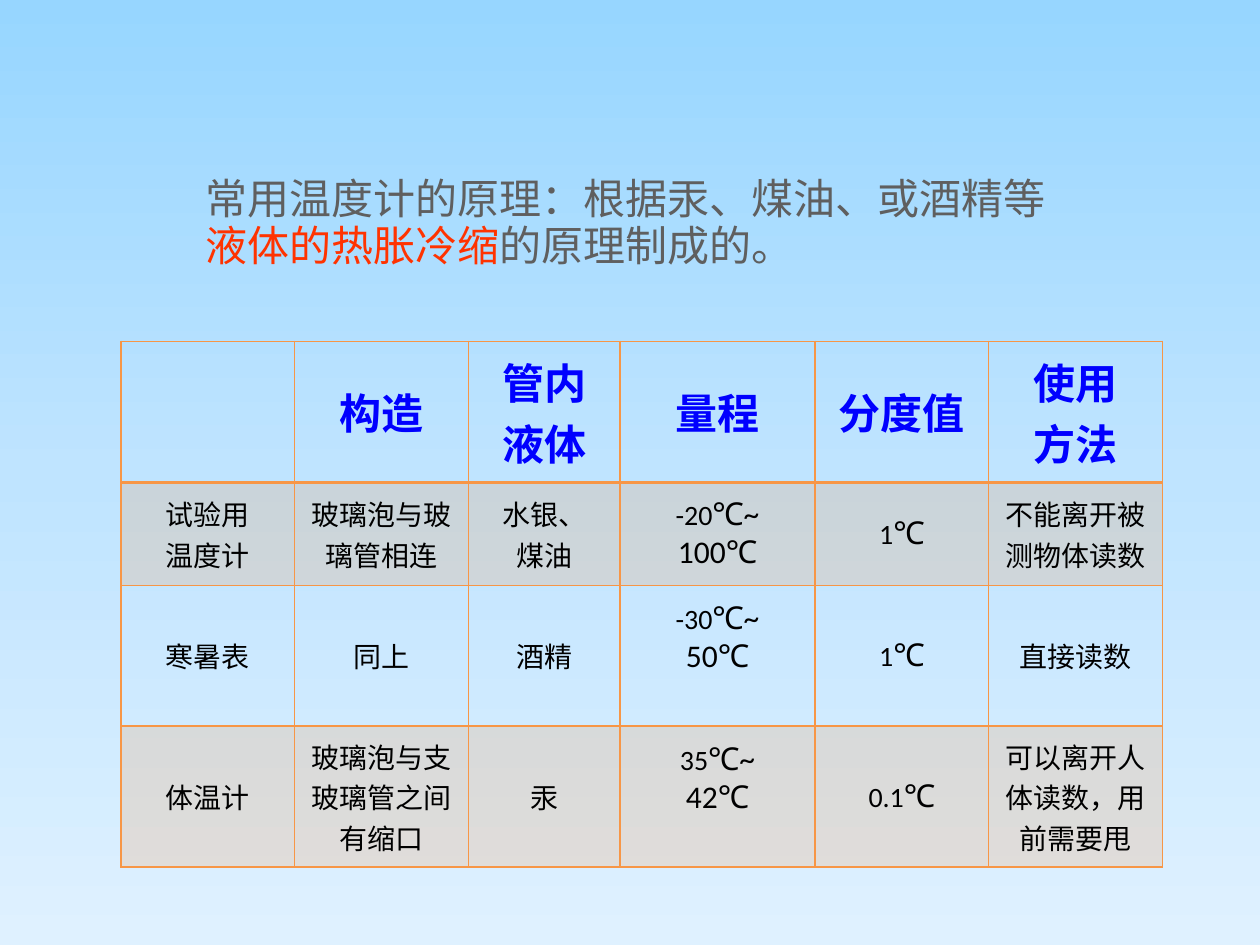
from copy import deepcopy

from lxml import etree
from pptx import Presentation
from pptx.dml.color import RGBColor
from pptx.enum import text
from pptx.oxml import ns
from pptx.util import Cm, Pt

GRAY, RED, BLUE, BLACK, ORANGE = "5F5F5F", "FF3300", "0000FF", "000000", "F79646"
SKY = ["97D6FF", "BFE4FF", "DFF1FF"]
INTRO = [
    [("常用温度计的原理：根据汞、煤油、或酒精等", GRAY)],
    [("液体的热胀冷缩", RED), ("的原理制成的。", GRAY)],
]
HEADS = ["", "构造", "管内\n液体", "量程", "分度值", "使用\n方法"]
ROWS = [
    ["试验用\n温度计", "玻璃泡与玻璃管相连", "水银、\n煤油", "-20|℃~\n|100℃", "1|℃", "不能离开被测物体读数"],
    ["寒暑表", "同上", "酒精", "-30|℃~\n|50℃", "1|℃", "直接读数"],
    ["体温计", "玻璃泡与支玻璃管之间有缩口", "汞", "35|℃~\n|42℃", "0.1|℃", "可以离开人体读数，用前需要甩"],
]
WIDTHS = [3.5, 3.5, 3.06, 3.93, 3.5, 3.5]
HEIGHTS = [2.84, 2.08, 2.84, 2.84]
RANGE = 3


def rgb(code):
    return RGBColor.from_string(code)


class Deck:
    """Holds the style and the current slide, and draws each kind of element."""

    def __init__(self):
        self.prs = Presentation()
        self.prs.slide_width, self.prs.slide_height = Cm(25.4), Cm(19.05)
        self.slide = self.prs.slides.add_slide(self.prs.slide_layouts[6])

    def sky(self, hues):
        fill = self.slide.background.fill
        fill.gradient()
        fill.gradient_angle = 270
        first = next(self.slide.element.iter(ns.qn("a:gs")))
        first.addnext(deepcopy(first))
        for n, (stop, hue) in enumerate(zip(fill.gradient_stops, hues)):
            stop.position = n / (len(hues) - 1)
            stop.color.rgb = rgb(hue)

    def intro(self, lines, left, top, width, height):
        box = self.slide.shapes.add_textbox(Cm(left), Cm(top), Cm(width), Cm(height))
        frame = box.text_frame
        frame.word_wrap = True
        frame.auto_size = text.MSO_AUTO_SIZE.SHAPE_TO_FIT_TEXT
        for n, line in enumerate(lines):
            para = frame.add_paragraph() if n else frame.paragraphs[0]
            para.line_spacing = 0.7
            para.space_before = Pt(7 if n else 0)
            para.font.name, para.font.size = "Arial", Pt(24)
            for words, hue in line:
                run = para.add_run()
                run.text = words
                run.font.color.rgb = rgb(hue)

    def table(self, rows, left, top, widths, heights):
        frame = self.slide.shapes.add_table(
            len(rows), len(widths), Cm(left), Cm(top), Cm(sum(widths)), Cm(sum(heights)))
        grid = frame.table
        grid.first_row = grid.horz_banding = False
        for col, width in zip(grid.columns, widths):
            col.width = Cm(width)
        for r, (row, height) in enumerate(zip(rows, heights)):
            grid.rows[r].height = Cm(height)
            for c, words in enumerate(row):
                cell = grid.cell(r, c)
                self.edge(cell, r)
                self.tint(cell, r % 2 == 1)
                self.label(cell, words, r == 0)
                if c == RANGE and r > 1:
                    cell.margin_bottom = Cm(0.86)

    def edge(self, cell, row):
        props = cell._tc.get_or_add_tcPr()
        thick = {0: "B", 1: "T"}.get(row)
        for side in "LRTB":
            line = etree.SubElement(
                props, ns.qn("a:ln" + side), w=str(Pt(2 if side == thick else 1)))
            fill = etree.SubElement(line, ns.qn("a:solidFill"))
            etree.SubElement(fill, ns.qn("a:srgbClr"), val=ORANGE)

    def tint(self, cell, shaded):
        if not shaded:
            cell.fill.background()
            return
        cell.fill.solid()
        cell.fill.fore_color.rgb = rgb(ORANGE)
        hue = cell._tc.tcPr.find(ns.qn("a:solidFill"))[0]
        etree.SubElement(hue, ns.qn("a:alpha"), val="20000")

    def label(self, cell, words, head):
        cell.vertical_anchor = text.MSO_ANCHOR.MIDDLE
        frame = cell.text_frame
        for n, line in enumerate(words.split("\n")):
            para = frame.add_paragraph() if n else frame.paragraphs[0]
            para.alignment = text.PP_ALIGN.CENTER
            font = para.font
            font.name, font.bold = "Calibri", head
            font.color.rgb = rgb(BLUE if head else BLACK)
            for part, size in zip(line.split("|"), [24 if head else 16, 18]):
                if part:
                    run = para.add_run()
                    run.text = part
                    run.font.size = Pt(size)


def main():
    deck = Deck()
    deck.sky(SKY)
    deck.intro(INTRO, 3.89, 3.63, 17.6, 2.18)
    deck.table([HEADS] + ROWS, 2.44, 6.88, WIDTHS, HEIGHTS)
    deck.prs.save("out.pptx")


if __name__ == "__main__":
    main()
